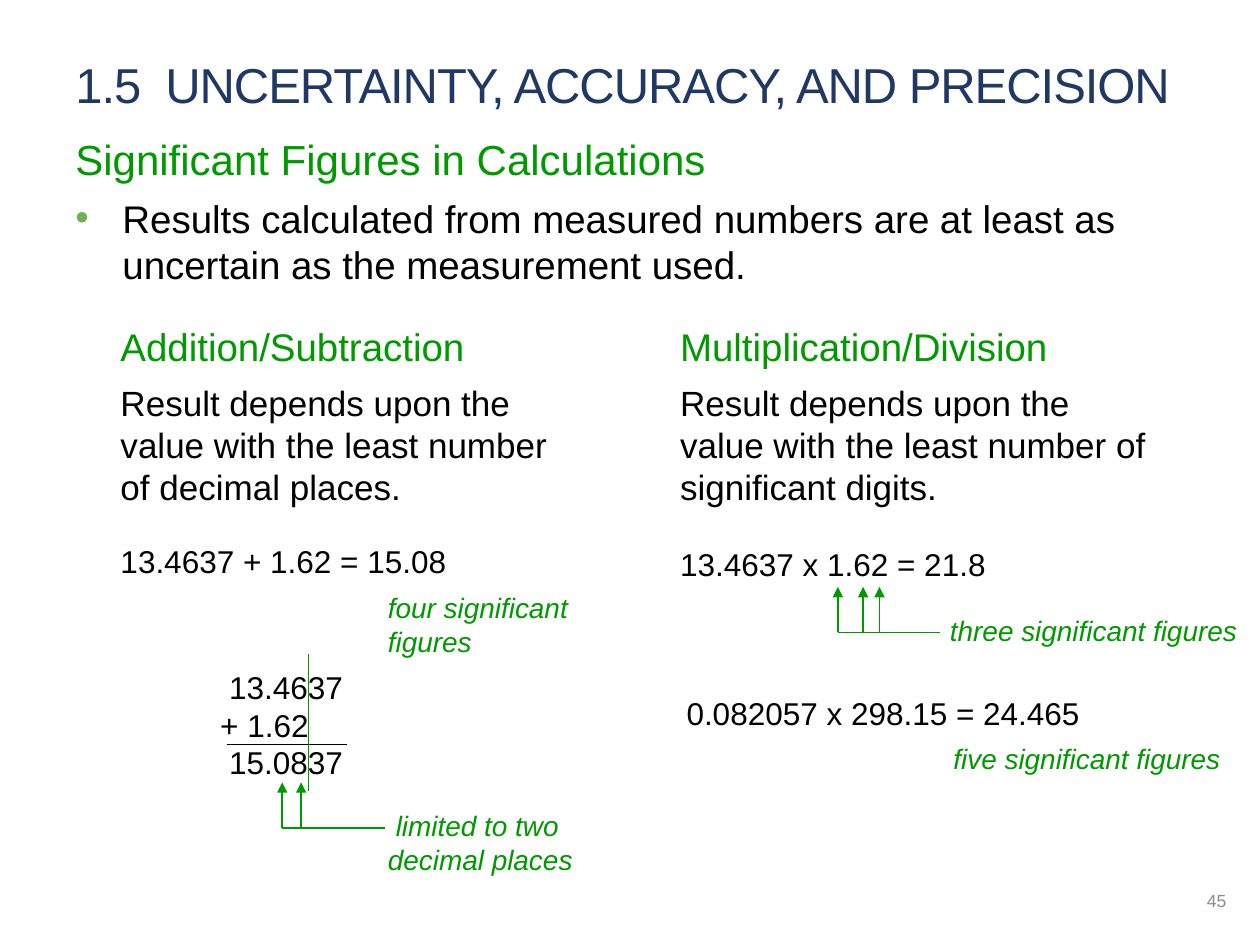
from lxml import etree
from pptx import Presentation
from pptx import util as u
from pptx.dml.color import RGBColor
from pptx.enum import shapes, text
from pptx.oxml.ns import qn


class Theme:
    font = "Arial"
    navy, green, black = "203864", "009900", "000000"
    grey, bullet = "8C8C8C", "6CB255"
    title, section, head, rule, example, label, number = 28, 24, 22, 20, 18, 16, 10
    line = 1


class SlideBuilder:
    """Holds the theme and the current slide."""

    def __init__(self, slide, theme):
        self.s, self.t = slide, theme

    def box(self, x, y, w, h, wrap=True, grow=True, anchor=text.MSO_ANCHOR.TOP):
        sp = self.s.shapes.add_textbox(*map(u.Cm, (x, y, w, h)))
        fit = text.MSO_AUTO_SIZE.SHAPE_TO_FIT_TEXT if grow else text.MSO_AUTO_SIZE.NONE
        tf = sp.text_frame
        for name, value in {"word_wrap": wrap, "auto_size": fit,
                            "vertical_anchor": anchor}.items():
            setattr(tf, name, value)
        return tf

    def para(self, tf, words, size, color, italic=False, margin=0, indent=0,
             bullet=None, spacing=None, **fmt):
        p = tf.paragraphs[0]
        if p.runs:
            p = tf.add_paragraph()
        pPr = p._p.get_or_add_pPr()
        for name, value in {"marL": margin, "indent": indent}.items():
            if value:
                pPr.set(name, str(int(u.Cm(value))))
        if bullet:
            clr = etree.SubElement(pPr, qn("a:buClr"))
            etree.SubElement(clr, qn("a:srgbClr"), val=self.t.bullet)
            etree.SubElement(pPr, qn("a:buFont"), typeface=self.t.font)
            etree.SubElement(pPr, qn("a:buChar"), char=bullet)
        for name, value in fmt.items():
            setattr(p, name, value)
        r = p.add_run()
        r.text = words
        for name, value in {"name": self.t.font, "size": u.Pt(size),
                            "italic": italic or None}.items():
            setattr(r.font, name, value)
        r.font.color.rgb = RGBColor.from_string(color)
        if spacing:
            r.font._element.set("spc", str(spacing))

    def text(self, at, words, size, color, wrap=True, **fmt):
        self.para(self.box(*at, wrap=wrap), words, size, color, **fmt)

    def label(self, at, words, **fmt):
        self.text(at, words, self.t.label, self.t.green, italic=True, **fmt)

    def line(self, x1, y1, x2, y2, color, arrow=False):
        cx = self.s.shapes.add_connector(
            shapes.MSO_CONNECTOR.STRAIGHT, *map(u.Cm, (x1, y1, x2, y2)))
        cx.line.width = u.Pt(self.t.line)
        cx.line.color.rgb = RGBColor.from_string(color)
        if arrow:
            etree.SubElement(cx.line._get_or_add_ln(), qn("a:tailEnd"), type="triangle")
        etree.SubElement(cx._element.spPr, qn("a:effectLst"))

    def digit_arrows(self, xs, base, end):
        """Arrows up to the digits, joined by a base line that runs to a label."""
        for x in xs:
            self.line(x, base, x, base - 0.92, self.t.green, arrow=True)
        self.line(xs[0], base, end, base, self.t.green)


def main():
    prs = Presentation()
    prs.slide_width, prs.slide_height = u.Cm(25.4), u.Cm(19.05)
    t = Theme
    b = SlideBuilder(prs.slides.add_slide(prs.slide_layouts[6]), t)

    # Title and slide number
    tf = b.box(1.27, 0.97, 23.7, 1.45, grow=False, anchor=text.MSO_ANCHOR.BOTTOM)
    b.para(tf, "1.5  UNCERTAINTY, ACCURACY, AND PRECISION", t.title, t.navy, spacing=-60)
    tf = b.box(19.25, 17.65, 5.72, 1.02, grow=False, anchor=text.MSO_ANCHOR.MIDDLE)
    b.para(tf, "45", t.number, t.grey, alignment=text.PP_ALIGN.RIGHT)

    # Introduction
    tf = b.box(1.27, 2.57, 22.33, 4.65, grow=False)
    b.para(tf, "Significant Figures in Calculations", t.section, t.green,
           space_after=u.Pt(6))
    b.para(tf, "Results calculated from measured numbers are at least as "
           "uncertain as the measurement used.", t.head, t.black,
           margin=0.95, indent=-0.95, bullet="•", space_after=u.Pt(6))

    # Two columns: heading, rule and worked example
    columns = [
        (2.18, "Addition/Subtraction", 7.52, "decimal places", 9.14,
         "13.4637 + 1.62 = 15.08", 10.8, 7.32),
        (13.46, "Multiplication/Division", 8.0, "significant digits", 10.21,
         "13.4637 x 1.62 = 21.8", 10.87, 6.91),
    ]
    for x, head, head_w, limit, rule_w, example, y, example_w in columns:
        b.text((x, 6.38, head_w, 1.19), head, t.head, t.green, wrap=False)
        b.text((x, 7.57, rule_w, 2.82),
               f"Result depends upon the value with the least number of {limit}.",
               t.rule, t.black)
        b.text((x, y, example_w, 1.02), example, t.example, t.black, wrap=False)

    # Addition: written sum with its cut-off line
    b.label((7.57, 11.79, 4.7, 1.63), "four significant figures")
    tf = b.box(4.19, 13.34, 3.0, 2.57, wrap=False)
    for words, margin in (("13.4637", 0.18), ("+ 1.62", 0), ("15.0837", 0.18)):
        b.para(tf, words, t.example, t.black, margin=margin)
    b.line(4.57, 15.01, 6.99, 15.01, t.black)
    b.line(6.22, 13.18, 6.22, 15.95, t.green)
    b.digit_arrows((5.69, 6.07), 16.69, 7.77)
    b.label((7.57, 16.18, 4.7, 1.63), "limited to two decimal places", indent=0.16)

    # Multiplication: significant digits and second example
    b.digit_arrows((16.89, 17.4, 17.73), 12.75, 18.95)
    b.label((18.9, 12.24, 6.43, 0.94), "three significant figures")
    b.text((13.59, 13.87, 8.69, 1.02), "0.082057 x 298.15 = 24.465",
           t.example, t.black, wrap=False)
    b.label((18.97, 14.83, 6.43, 0.94), "five significant figures")

    prs.save("out.pptx")


if __name__ == "__main__":
    main()
